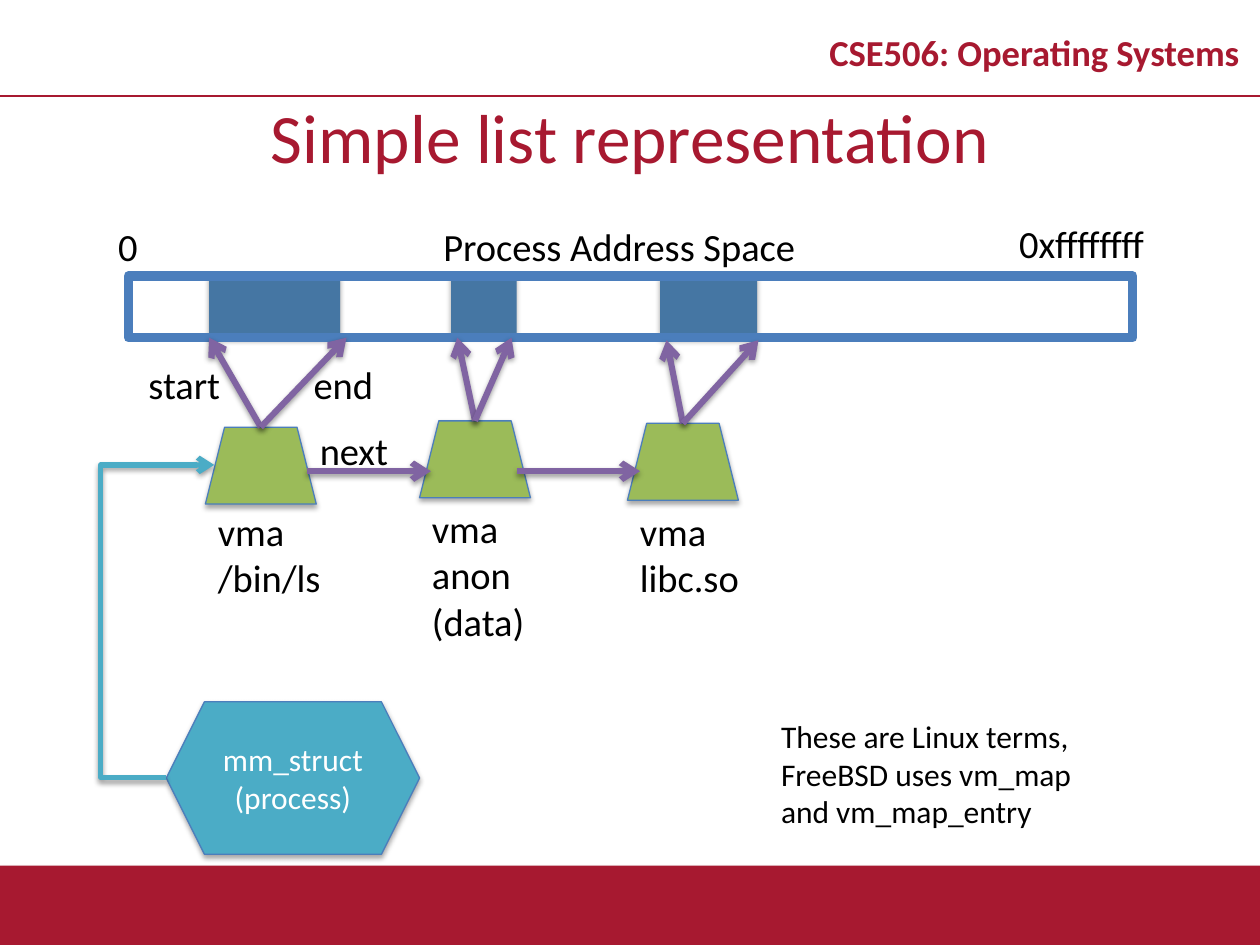
from lxml import etree
from pptx import Presentation
from pptx.dml.color import RGBColor
from pptx.enum.shapes import MSO_CONNECTOR as CONN, MSO_SHAPE as SHAPE
from pptx.enum.text import MSO_ANCHOR as ANCHOR, PP_ALIGN as ALIGN
from pptx.oxml import parse_xml
from pptx.oxml.ns import qn
from pptx.util import Inches, Pt

W, H = 10, 7.5
A_NS = "http://schemas.openxmlformats.org/drawingml/2006/main"
C = {"red": "A71930", "block": "4576A3", "edge": "4B7EBC", "vma": "9BBB59",
     "arrow": "8064A2", "mm": "4BACC6", "black": "000000", "white": "FFFFFF"}

# Content: mapped regions as (left, top, width)
BAR = (1.02, 2.19, 7.97, 0.49)
REGIONS = [(5.24, 2.19, 0.77), (3.58, 2.17, 0.52), (1.66, 2.19, 1.04)]
# Each vma: left, top, label lines, label top and width, arrow targets (start x, end x, y)
VMA_W, VMA_H = 0.88, 0.61
VMAS = [
    (1.63, 3.39, ["vma", "/bin/ls"], 3.98, 1.15, (1.66, 2.75, 2.68)),
    (3.33, 3.34, ["vma", "anon", "(data)"], 3.96, 0.96, (3.63, 4.06, 2.68)),
    (4.98, 3.36, ["vma", "libc.so"], 3.98, 1.03, (5.29, 6.02, 2.7)),
]
NEXT_Y, NEXT_LEN = 3.74, 0.98
NEXT_STARTS = [2.44, 4.1]
# Labels: text, left, top, width
LABELS = [
    ("Process Address Space", 3.42, 1.72, 3.17),
    ("0", 0.84, 1.72, 0.36),
    ("0xffffffff", 7.99, 1.7, 1.3),
    ("start", 1.08, 2.82, 0.77),
    ("end", 2.39, 2.82, 0.77),
    ("next", 2.44, 3.34, 0.77),
]
LABEL_H = 0.47
MM = (1.32, 5.57, 2.01, 1.21)
NOTE = "These are Linux terms, FreeBSD uses vm_map and vm_map_entry"


def rgb(name):
    return RGBColor.from_string(C[name])


def set_effects(shape, alpha=None, dist=1.8):
    """Give the shape a soft downward shadow, or none without alpha."""
    shadow = "" if alpha is None else (
        f'<a:outerShdw blurRad="{Pt(3.1)}" dist="{Pt(dist)}" dir="5400000" rotWithShape="0">'
        f'<a:srgbClr val="000000"><a:alpha val="{alpha * 1000}"/></a:srgbClr></a:outerShdw>')
    sp_pr = shape._element.spPr
    for old in sp_pr.findall(qn("a:effectLst")):
        sp_pr.remove(old)
    sp_pr.append(parse_xml(f'<a:effectLst xmlns:a="{A_NS}">{shadow}</a:effectLst>'))


def write(shape, lines, size=22, color="black", bold=False, align=ALIGN.LEFT,
          anchor=ANCHOR.TOP, wrap=True, spacing=None):
    tf = shape.text_frame
    tf.word_wrap, tf.vertical_anchor = wrap, anchor
    for i, line in enumerate(lines):
        p = tf.add_paragraph() if i else tf.paragraphs[0]
        p.alignment = align
        if spacing:
            p.line_spacing = spacing
        r = p.add_run()
        r.text = line
        r.font.name, r.font.size, r.font.bold = "Calibri", Pt(size), bold
        r.font.color.rgb = rgb(color)


def add_text(s, lines, x, y, w, h, **fmt):
    write(s.shapes.add_textbox(*map(Inches, (x, y, w, h))), lines, **fmt)


def add_shape(s, kind, box, fill=None, line=None, width=0.75, shadow=True):
    sp = s.shapes.add_shape(kind, *map(Inches, box))
    if fill:
        sp.fill.solid()
        sp.fill.fore_color.rgb = rgb(fill)
    else:
        sp.fill.background()
    if line:
        sp.line.color.rgb, sp.line.width = rgb(line), Pt(width)
    else:
        sp.line.fill.background()
    set_effects(sp, 35 if shadow else None)
    return sp


def add_line(s, start, end, color, width, kind=CONN.STRAIGHT, arrow=True):
    c = s.shapes.add_connector(kind, *map(Inches, start + end))
    c.line.color.rgb, c.line.width = rgb(color), Pt(width)
    if arrow:
        etree.SubElement(c.line._get_or_add_ln(), qn("a:tailEnd"), type="arrow")
    set_effects(c, 38 if arrow else None, 1.6)
    return c


def main():
    prs = Presentation()
    prs.slide_width, prs.slide_height = Inches(W), Inches(H)
    s = prs.slides.add_slide(prs.slide_layouts[6])

    # Header, footer and title
    add_shape(s, SHAPE.RECTANGLE, (0, 6.87, W, H - 6.87), "red")
    add_line(s, (0, 0.76), (W, 0.76), "red", 1, arrow=False)
    centred = {"color": "red", "align": ALIGN.CENTER, "anchor": ANCHOR.MIDDLE}
    add_text(s, ["CSE506: Operating Systems"], 6.42, 0.13, 3.58, 0.63,
             size=20.9, bold=True, spacing=0.8, **centred)
    add_text(s, ["Simple list representation"], 0, 0.76, W, 0.63, size=39.6, **centred)

    # Address space bar over its mapped regions
    for x, y, w in REGIONS:
        add_shape(s, SHAPE.RECTANGLE, (x, y, w, BAR[3]), "block")
    add_shape(s, SHAPE.RECTANGLE, BAR, line="edge", width=5.5, shadow=False)

    # List nodes with arrows to the ends of their regions
    for x, y, lines, label_y, label_w, (first, last, target_y) in VMAS:
        node = add_shape(s, SHAPE.TRAPEZOID, (x, y, VMA_W, VMA_H), "vma", "edge")
        add_text(s, lines, x, label_y, label_w, 0.1 + 0.37 * len(lines), wrap=False)
        for target_x in (first, last):
            c = add_line(s, (x + VMA_W / 2, y), (target_x, target_y), "arrow", 3.5)
            c.begin_connect(node, 0)
    for x in NEXT_STARTS:
        add_line(s, (x, NEXT_Y), (x + NEXT_LEN, NEXT_Y), "arrow", 3.5)
    for text, x, y, w in LABELS:
        add_text(s, [text], x, y, w, LABEL_H, wrap=False)

    # Process structure pointing at the list head
    mm = add_shape(s, SHAPE.HEXAGON, MM, "mm", "edge")
    write(mm, ["mm_struct", "(process)"], size=18, color="white",
          align=ALIGN.CENTER, anchor=ANCHOR.MIDDLE)
    head = add_line(s, (MM[0], 6.17), (1.7, 3.69), "mm", 3, CONN.ELBOW)
    av = head._element.spPr.find(qn("a:prstGeom")).find(qn("a:avLst"))
    etree.SubElement(av, qn("a:gd"), name="adj1", fmla="val -137200")

    add_text(s, [NOTE], 6.1, 5.64, 2.68, 1.01, size=18)
    prs.save("out.pptx")


if __name__ == "__main__":
    main()
